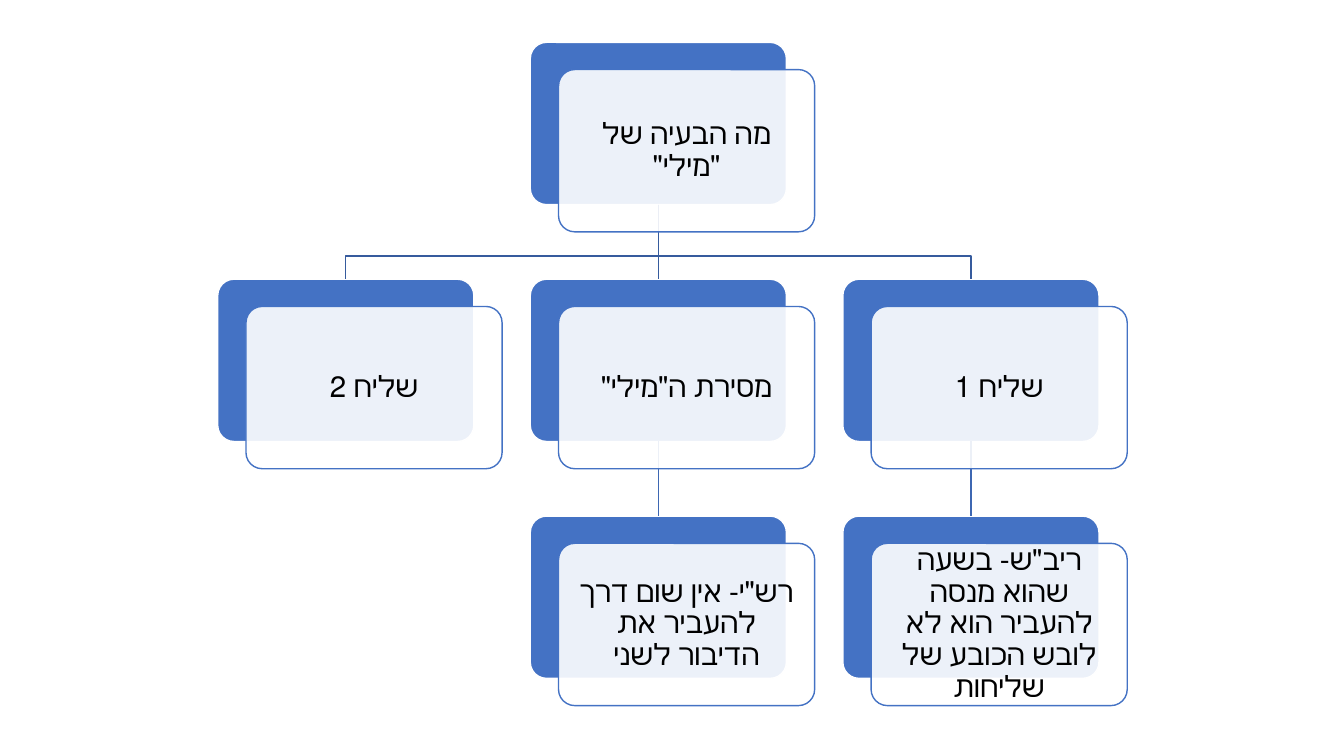
"""Builds a right-to-left hierarchy slide of layered cards."""
from lxml.etree import SubElement
from pptx import Presentation
from pptx.dml.color import RGBColor
from pptx.enum.shapes import MSO_CONNECTOR as Connector, MSO_SHAPE as Shape
from pptx.enum.text import MSO_ANCHOR as Anchor, PP_ALIGN as Align
from pptx.oxml.ns import qn
from pptx.util import Inches, Pt

BLUE = RGBColor(0x44, 0x72, 0xC4)
UPPER_LINK = RGBColor(0x36, 0x5B, 0x9D)
LOWER_LINK = RGBColor(0x3E, 0x67, 0xB2)
WHITE = RGBColor(0xFF, 0xFF, 0xFF)
BLACK = RGBColor(0, 0, 0)

CARD_WIDTH, CARD_HEIGHT = Inches(2.54), Inches(1.61)
COLUMN_PITCH, ROW_PITCH = Inches(3.1), Inches(2.35)
FRONT_SHIFT_X, FRONT_SHIFT_Y = Inches(0.28), Inches(0.27)
ELBOW_DROP = Inches(0.51)

CARDS = {
    (0, 1): 'מה הבעיה של "מילי"',
    (1, 2): "שליח 1",
    (2, 2): 'ריב"ש- בשעה שהוא מנסה להעביר הוא לא לובש הכובע של שליחות',
    (1, 1): 'מסירת ה"מילי"',
    (2, 1): 'רש"י- אין שום דרך להעביר את הדיבור לשני',
    (1, 0): "שליח 2",
}
LINKS = [
    ((0, 1), (1, 0)),
    ((1, 1), (2, 1)),
    ((0, 1), (1, 1)),
    ((1, 2), (2, 2)),
    ((0, 1), (1, 2)),
]


def add_card_layer(slide, left, top, fill, outline):
    """Add one rounded layer of a card."""
    layer = slide.shapes.add_shape(Shape.ROUNDED_RECTANGLE, left, top, CARD_WIDTH, CARD_HEIGHT)
    layer.adjustments[0] = 0.1
    layer.shadow.inherit = False
    layer.fill.solid()
    layer.fill.fore_color.rgb = fill
    layer.line.color.rgb = outline
    layer.line.width = Pt(1)
    return layer


def add_card_front(slide, back, label):
    """Add the translucent labelled layer over a card's back."""
    front = add_card_layer(slide, back.left + FRONT_SHIFT_X, back.top + FRONT_SHIFT_Y, WHITE, BLUE)
    color = front.fill._xPr.find(qn("a:solidFill"))[0]
    SubElement(color, qn("a:alpha"), val="90000")
    frame = front.text_frame
    frame.word_wrap = True
    frame.vertical_anchor = Anchor.MIDDLE
    frame.margin_left = frame.margin_right = Inches(0.13)
    frame.margin_top = frame.margin_bottom = 0
    paragraph = frame.paragraphs[0]
    paragraph.text = label
    paragraph.alignment = Align.CENTER
    paragraph.line_spacing = 0.9
    paragraph._p.get_or_add_pPr().set("rtl", "1")
    font = paragraph.font
    font.name, font.size, font.color.rgb = "Calibri", Pt(21), BLACK


def add_link(slide, parent, child, color):
    """Join a parent card to its child, straight down or through an elbow."""
    start_x, start_y = parent.left + CARD_WIDTH // 2, parent.top + CARD_HEIGHT
    end_x, end_y = child.left + CARD_WIDTH // 2, child.top
    if start_x == end_x:
        link = slide.shapes.add_connector(Connector.STRAIGHT, start_x, start_y, end_x, end_y)
        link.begin_connect(parent, 2)
        link.end_connect(child, 0)
        SubElement(link._element.spPr, qn("a:ln"))
        SubElement(link._element.spPr, qn("a:effectLst"))
    else:
        bend_y = start_y + ELBOW_DROP
        outline = slide.shapes.build_freeform(start_x, start_y)
        outline.add_line_segments([(start_x, bend_y), (end_x, bend_y), (end_x, end_y)], close=False)
        link = outline.convert_to_shape()
        link.fill.background()
        link.shadow.inherit = False
    link.line.color.rgb = color
    link.line.width = Pt(1)


def add_hierarchy(slide, left, top):
    """Place the whole card tree from its top left corner."""
    backs = {
        (row, column): add_card_layer(
            slide, left + column * COLUMN_PITCH, top + row * ROW_PITCH, BLUE, WHITE)
        for row, column in CARDS
    }
    for parent, child in LINKS:
        color = UPPER_LINK if parent[0] == 0 else LOWER_LINK
        add_link(slide, backs[parent], backs[child], color)
    for place, label in CARDS.items():
        add_card_front(slide, backs[place], label)


def main():
    """Build and save the slide."""
    deck = Presentation()
    deck.slide_width, deck.slide_height = Inches(13.33), Inches(7.5)
    slide = deck.slides.add_slide(deck.slide_layouts[6])
    add_hierarchy(slide, Inches(2.16), Inches(0.42))
    deck.save("out.pptx")


if __name__ == "__main__":
    main()
